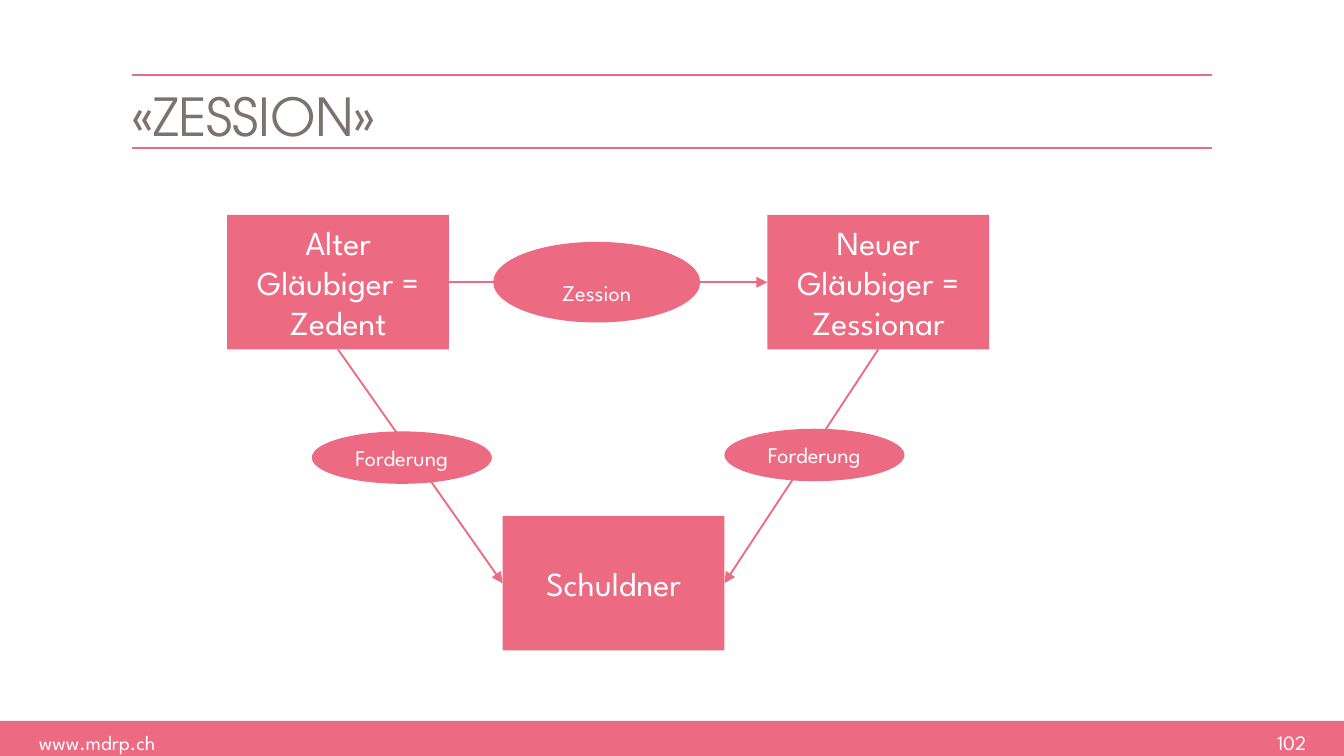
from pptx import Presentation
from pptx.dml.color import RGBColor
from pptx.enum.shapes import MSO_CONNECTOR as Line, MSO_SHAPE as Shape
from pptx.enum.text import MSO_ANCHOR as Anchor, PP_ALIGN as Align
from pptx.oxml.ns import qn
from pptx.util import Inches, Pt
from lxml.etree import SubElement

PINK = RGBColor(0xED, 0x6B, 0x82)
GREY = RGBColor(0x7B, 0x72, 0x71)
WHITE = RGBColor(0xFF, 0xFF, 0xFF)
BODY_FONT, TITLE_FONT = "League Spartan", "TeX Gyre Adventor"

# Grid: a cell is a tenth of an inch; regions are (left, top, width, height)
WIDTH, HEIGHT = 100, 56.25
HEADER = (9.8, 5.6, 80.4, 5.4)
DIAGRAM = (16.9, 16, 56.7, 32.4)
FOOTER = (0, 53.65, WIDTH, 2.6)


def cells(*counts):
    return [Inches(count / 10) for count in counts]


def place(region, left, top, width, height):
    return cells(region[0] + left, region[1] + top, width, height)


def write(shape, text, size, align, font=BODY_FONT, color=WHITE,
          spacing=None, margin=0, anchor=Anchor.TOP):
    frame = shape.text_frame
    frame.word_wrap = True
    frame.vertical_anchor = anchor
    for side in ("left", "right", "top", "bottom"):
        inset = margin if side in ("left", "right") else margin / 2
        setattr(frame, f"margin_{side}", Inches(inset))
    para = frame.paragraphs[0]
    para.alignment = align
    if spacing:
        para.line_spacing = spacing
    span = para.add_run()
    span.text = text
    for name, value in {"name": font, "size": Pt(size)}.items():
        setattr(span.font, name, value)
    span.font.color.rgb = color
    return span


def add_block(page, kind, position):
    shape = page.shapes.add_shape(kind, *position)
    shape.shadow.inherit = False
    shape.fill.solid()
    shape.fill.fore_color.rgb = PINK
    shape.line.fill.background()
    return shape


def add_line(page, start=(0, 0), end=(0, 0)):
    line = page.shapes.add_connector(Line.STRAIGHT, *cells(*start, *end))
    line.line.color.rgb = PINK
    line.line.width = Pt(1)
    SubElement(line._element.spPr, qn("a:effectLst"))
    return line


def add_arrow(page, source, source_side, target, target_side):
    arrow = add_line(page)
    arrow.begin_connect(source, source_side)
    arrow.end_connect(target, target_side)
    SubElement(arrow._element.spPr.find(qn("a:ln")), qn("a:tailEnd"),
               type="triangle")


def add_header(page, region, title):
    left, top, width, height = region
    for y in (top, top + height):
        add_line(page, (left, y), (left + width, y))
    box = page.shapes.add_textbox(*place(region, 0, 0, width, 5.2))
    span = write(box, title, 28, Align.LEFT, TITLE_FONT, GREY, spacing=1.14)
    span.font._element.set("spc", "-5")


def add_footer(page, region, site, number):
    add_block(page, Shape.RECTANGLE, cells(*region))
    for text, left, width, align in ((site, 2.9, 10.2, Align.LEFT),
                                     (number, 91.1, 6.1, Align.RIGHT)):
        box = page.shapes.add_textbox(*place(region, left, 0.7, width, 1.6))
        write(box, text, 11, align)


def add_diagram(page, region):
    # Parties
    def party(text, left, top):
        box = add_block(page, Shape.RECTANGLE,
                        place(region, left, top, 16.5, 10))
        write(box, text, 18, Align.CENTER, margin=0.1, anchor=Anchor.MIDDLE)
        return box

    old_creditor = party("Alter Gläubiger = Zedent", 0, 0)
    debtor = party("Schuldner", 20.5, 22.4)
    new_creditor = party("Neuer Gläubiger = Zessionar", 40.2, 0)

    # Arrows between the parties
    add_arrow(page, old_creditor, 2, debtor, 1)
    add_arrow(page, old_creditor, 3, new_creditor, 1)
    add_arrow(page, new_creditor, 2, debtor, 3)

    # Labels on the arrows
    for text, spot, spacing, margin in (
            ("Forderung", (6.3, 16.1, 13.4, 3.9), None, 0.1),
            ("Zession", (19.8, 2, 15.4, 6), Pt(25), 0),
            ("Forderung", (37, 15.9, 13.4, 3.9), None, 0.1)):
        label = add_block(page, Shape.OVAL, place(region, *spot))
        write(label, text, 12, Align.CENTER, spacing=spacing, margin=margin,
              anchor=Anchor.MIDDLE)


def main():
    deck = Presentation()
    deck.slide_width, deck.slide_height = cells(WIDTH, HEIGHT)
    page = deck.slides.add_slide(deck.slide_layouts[6])
    add_footer(page, FOOTER, "www.mdrp.ch", "102")
    add_header(page, HEADER, "«ZESSION»")
    add_diagram(page, DIAGRAM)
    deck.save("out.pptx")


if __name__ == "__main__":
    main()
